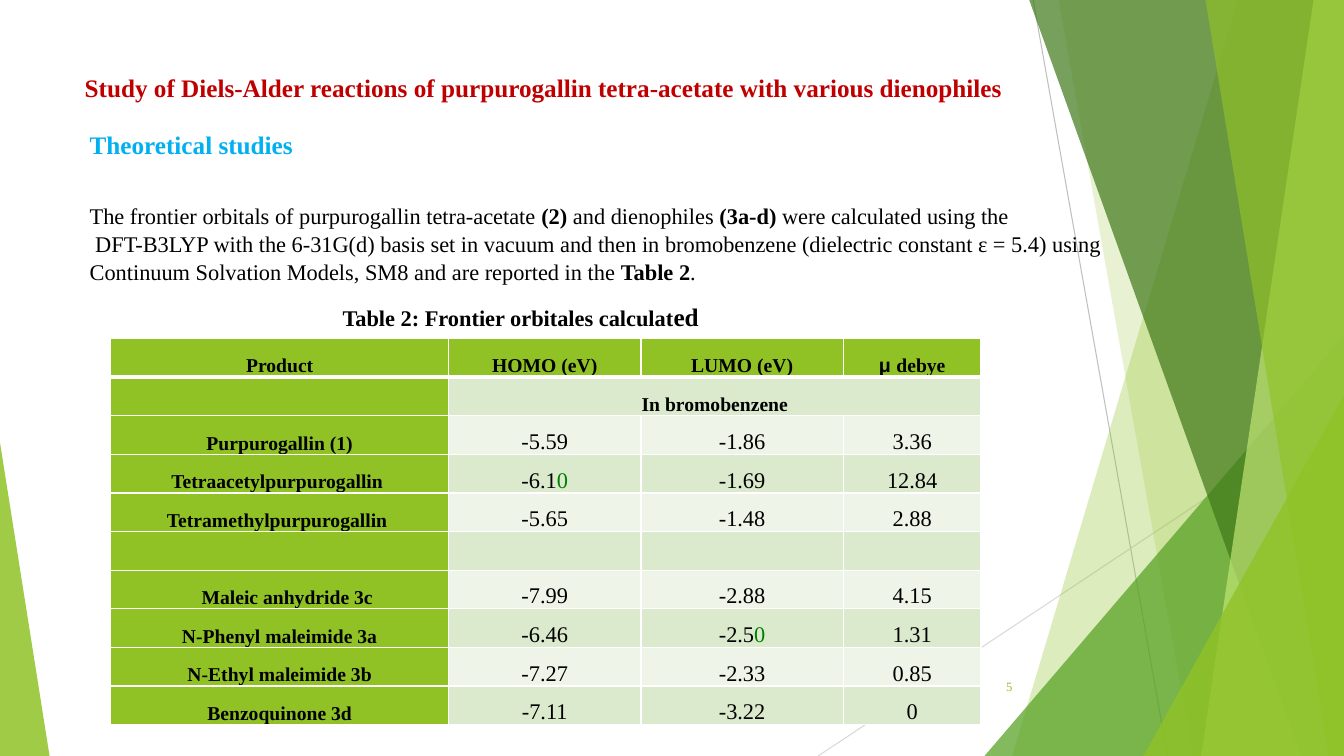
from dataclasses import dataclass

from lxml.etree import SubElement
from pptx import Presentation
from pptx.dml.color import RGBColor
from pptx.enum.shapes import MSO_CONNECTOR, MSO_SHAPE
from pptx.enum.text import MSO_ANCHOR, PP_ALIGN
from pptx.oxml.ns import qn
from pptx.slide import Slide
from pptx.table import _Cell
from pptx.text.text import _Paragraph
from pptx.util import Emu, Inches, Pt

# The page is a grid of 160 columns by 90 rows, with square units
COLUMNS, ROWS = 160, 90
UNIT = Inches(7.5) / ROWS


@dataclass(frozen=True)
class Theme:
    font: str = "Times New Roman"
    symbol_font: str = "Arial"
    black: str = "000000"
    white: str = "FFFFFF"
    title: str = "C00000"
    heading: str = "00B0F0"
    zero: str = "008000"
    lime: str = "90C226"
    pale_lime: str = "C0E474"
    leaf: str = "54A021"
    forest: str = "3F7819"
    dark_band: str = "DBE9CD"
    light_band: str = "EEF4E8"
    grey: str = "BFBFBF"
    light_grey: str = "D9D9D9"
    large: float = 18
    body: float = 16
    label: float = 14
    number: float = 9


THEME = Theme()


@dataclass(frozen=True)
class Span:
    text: str
    size: float = THEME.body
    bold: bool = False
    colour: str = THEME.black
    font: str = THEME.font


@dataclass(frozen=True)
class TextBlock:
    left: float
    top: float
    width: float
    height: float
    paras: list[list[Span]]
    anchor: MSO_ANCHOR = MSO_ANCHOR.TOP
    align: PP_ALIGN = PP_ALIGN.LEFT
    spacing: float = 1.0


@dataclass(frozen=True)
class Ray:
    start: tuple[float, float]
    end: tuple[float, float]
    colour: str


@dataclass(frozen=True)
class Blade:
    """A band from the top edge to the bottom edge, filling up to the right edge."""
    top: float
    foot: float
    colour: str
    opacity: int


@dataclass(frozen=True)
class Wedge:
    """A triangle standing on the bottom edge; tip is 0 (left) or 1 (right)."""
    left: float
    top: float
    width: float
    tip: int
    colour: str
    opacity: int


@dataclass(frozen=True)
class Compound:
    name: str
    values: tuple[str, ...]
    indent: float = 0


RAYS = [
    Ray((123, 0), (139, ROWS), THEME.grey),
    Ray((COLUMNS, 48.4), (97.4, ROWS), THEME.light_grey),
]
FACETS = [
    Blade(147.4, 120.5, THEME.lime, 30),
    Blade(126, 142, THEME.lime, 20),
    Wedge(117.2, 40, 42.8, 1, THEME.leaf, 72),
    Blade(122.5, 154.9, THEME.forest, 70),
    Blade(156.4, 143, THEME.pale_lime, 70),
    Blade(143.5, 158.2, THEME.lime, 65),
    Wedge(136.1, 47.1, 23.9, 1, THEME.lime, 80),
    Wedge(0, 52.7, 5.9, 0, THEME.lime, 85),
]
TEXTS = [
    TextBlock(8.9, 8, 112.1, 6.4, [[Span(
        "Study of Diels-Alder reactions of purpurogallin tetra-acetate with various dienophiles",
        THEME.large, True, THEME.title)]]),
    TextBlock(112.7, 79.3, 9, 4.8, [[Span("5", THEME.number, colour=THEME.lime)]],
              MSO_ANCHOR.MIDDLE, PP_ALIGN.RIGHT),
    TextBlock(9.5, 14.8, 27.6, 8.5,
              [[Span("Theoretical studies", THEME.large, True, THEME.heading)]]),
    TextBlock(9.5, 23.3, 125.3, 14.2, [
        [Span("The frontier orbitals of purpurogallin tetra-acetate "), Span("(2)", bold=True),
         Span(" and dienophiles "), Span("(3a-d) ", bold=True),
         Span("were calculated using the")],
        [Span(" DFT-B3LYP with the 6-31G(d) basis set in vacuum and then in bromobenzene "
              "(dielectric constant ε = 5.4) using")],
        [Span("Continuum Solvation Models, SM8 and are reported in the "),
         Span("Table 2", bold=True), Span(".")],
    ], spacing=1.05),
    TextBlock(39.6, 31.6, 45.5, 8.5, [[
        Span("Table 2: Frontier orbitales calculat", bold=True),
        Span("ed", THEME.large, True)]], MSO_ANCHOR.BOTTOM),
]
COLUMN_WIDTHS = [40.2, 22.9, 24.1, 16.4]
ROW_HEIGHT = 4.6
COMPOUNDS = [
    Compound("Purpurogallin (1)", ("-5.59", "-1.86", "3.36")),
    Compound("Tetraacetylpurpurogallin ", ("-6.10", "-1.69", "12.84")),
    Compound("Tetramethylpurpurogallin ", ("-5.65", "-1.48", "2.88")),
    Compound("", ("", "", "")),
    Compound("Maleic anhydride 3c", ("-7.99", "-2.88", "4.15"), 0.15),
    Compound("N-Phenyl maleimide 3a", ("-6.46", "-2.50", "1.31")),
    Compound("N-Ethyl maleimide 3b", ("-7.27", "-2.33", "0.85")),
    Compound("Benzoquinone 3d", ("-7.11", "-3.22", "0")),
]


def grid(units: float) -> Emu:
    return Emu(round(units * UNIT))


def add_spans(para: _Paragraph, spans: list[Span]) -> None:
    for span in spans:
        run = para.add_run()
        run.text = span.text
        run.font.name, run.font.size, run.font.bold = span.font, Pt(span.size), span.bold
        run.font.color.rgb = RGBColor.from_string(span.colour)


def draw_text(page: Slide, block: TextBlock) -> None:
    box = page.shapes.add_textbox(*map(grid, (block.left, block.top, block.width, block.height)))
    frame = box.text_frame
    frame.word_wrap, frame.vertical_anchor = True, block.anchor
    for index, spans in enumerate(block.paras):
        para = frame.add_paragraph() if index else frame.paragraphs[0]
        para.alignment, para.line_spacing = block.align, block.spacing
        add_spans(para, spans)


def draw_ray(page: Slide, ray: Ray) -> None:
    line = page.shapes.add_connector(MSO_CONNECTOR.STRAIGHT, *map(grid, ray.start + ray.end))
    line.line.color.rgb, line.line.width = RGBColor.from_string(ray.colour), Pt(0.75)
    SubElement(line._element.spPr, qn("a:effectLst"))


def draw_facet(page: Slide, facet: Blade | Wedge) -> None:
    if isinstance(facet, Blade):
        corners = [(facet.top, -0.1), (COLUMNS, -0.1), (COLUMNS, ROWS), (facet.foot, ROWS)]
        first, *others = [(grid(x), grid(y)) for x, y in corners]
        builder = page.shapes.build_freeform(*first)
        shape = builder.add_line_segments(others, close=True).convert_to_shape()
    else:
        shape = page.shapes.add_shape(MSO_SHAPE.ISOSCELES_TRIANGLE, *map(
            grid, (facet.left, facet.top, facet.width, ROWS - facet.top)))
        shape.adjustments[0] = facet.tip
    shape.shadow.inherit = False
    shape.line.fill.background()
    shape.fill.solid()
    shape.fill.fore_color.rgb = RGBColor.from_string(facet.colour)
    tint = shape._element.spPr.find(qn("a:solidFill"))[0]
    SubElement(tint, qn("a:alpha"), val=str(facet.opacity * 1000))


def style_cell(cell: _Cell, row: int, column: int) -> None:
    cell.margin_left = cell.margin_right = Inches(0.05)
    cell.margin_top = cell.margin_bottom = 0
    cell.vertical_anchor = MSO_ANCHOR.BOTTOM
    # White rules, thicker under the header row
    thick_side = {0: "B", 1: "T"}.get(row)
    for side in "LRTB":
        width = Pt(3 if side == thick_side else 1)
        rule = SubElement(cell._tc.get_or_add_tcPr(), qn(f"a:ln{side}"), w=str(width))
        SubElement(SubElement(rule, qn("a:solidFill")), qn("a:srgbClr"), val=THEME.white)
    band = THEME.dark_band if row % 2 else THEME.light_band
    cell.fill.solid()
    cell.fill.fore_color.rgb = RGBColor.from_string(
        THEME.lime if row == 0 or column == 0 else band)


def label(text: str, font: str = THEME.font) -> Span:
    return Span(text, THEME.label, True, font=font)


def value_spans(value: str) -> list[Span]:
    """A padding zero after the decimal point is set in green."""
    if "." in value and value.endswith("0"):
        return [Span(value[:-1]), Span("0", colour=THEME.zero)]
    return [Span(value)] if value else []


def draw_table(page: Slide) -> None:
    rows = [
        [[label("Product")], [label("HOMO (eV)")], [label("LUMO (eV)")],
         [label("μ ", THEME.symbol_font), label("debye")]],
        [[], [label("In bromobenzene")], [], []],
    ]
    for compound in COMPOUNDS:
        name = [label(compound.name)] if compound.name else []
        rows.append([name, *map(value_spans, compound.values)])
    table = page.shapes.add_table(
        len(rows), len(COLUMN_WIDTHS), grid(13.2), grid(40.3),
        grid(sum(COLUMN_WIDTHS)), grid(ROW_HEIGHT * len(rows))).table
    table.first_row = table.horz_banding = False
    for column, width in zip(table.columns, COLUMN_WIDTHS):
        column.width = grid(width)
    for row, cells in enumerate(rows):
        table.rows[row].height = grid(ROW_HEIGHT)
        for column, spans in enumerate(cells):
            cell = table.cell(row, column)
            style_cell(cell, row, column)
            para = cell.text_frame.paragraphs[0]
            para.alignment, para.line_spacing = PP_ALIGN.CENTER, Pt(13)
            add_spans(para, spans)
    table.cell(1, 1).merge(table.cell(1, 3))
    for row, compound in enumerate(COMPOUNDS, start=2):
        if compound.indent:
            para = table.cell(row, 0).text_frame.paragraphs[0]
            para._p.get_or_add_pPr().set("indent", str(Inches(compound.indent)))


def main() -> None:
    deck = Presentation()
    deck.slide_width, deck.slide_height = grid(COLUMNS), grid(ROWS)
    page = deck.slides.add_slide(deck.slide_layouts[6])
    # Backdrop
    for ray in RAYS:
        draw_ray(page, ray)
    for facet in FACETS:
        draw_facet(page, facet)
    # Content: title and page number lie behind the table, the rest above it
    for block in TEXTS[:2]:
        draw_text(page, block)
    draw_table(page)
    for block in TEXTS[2:]:
        draw_text(page, block)
    deck.save("out.pptx")


if __name__ == "__main__":
    main()
